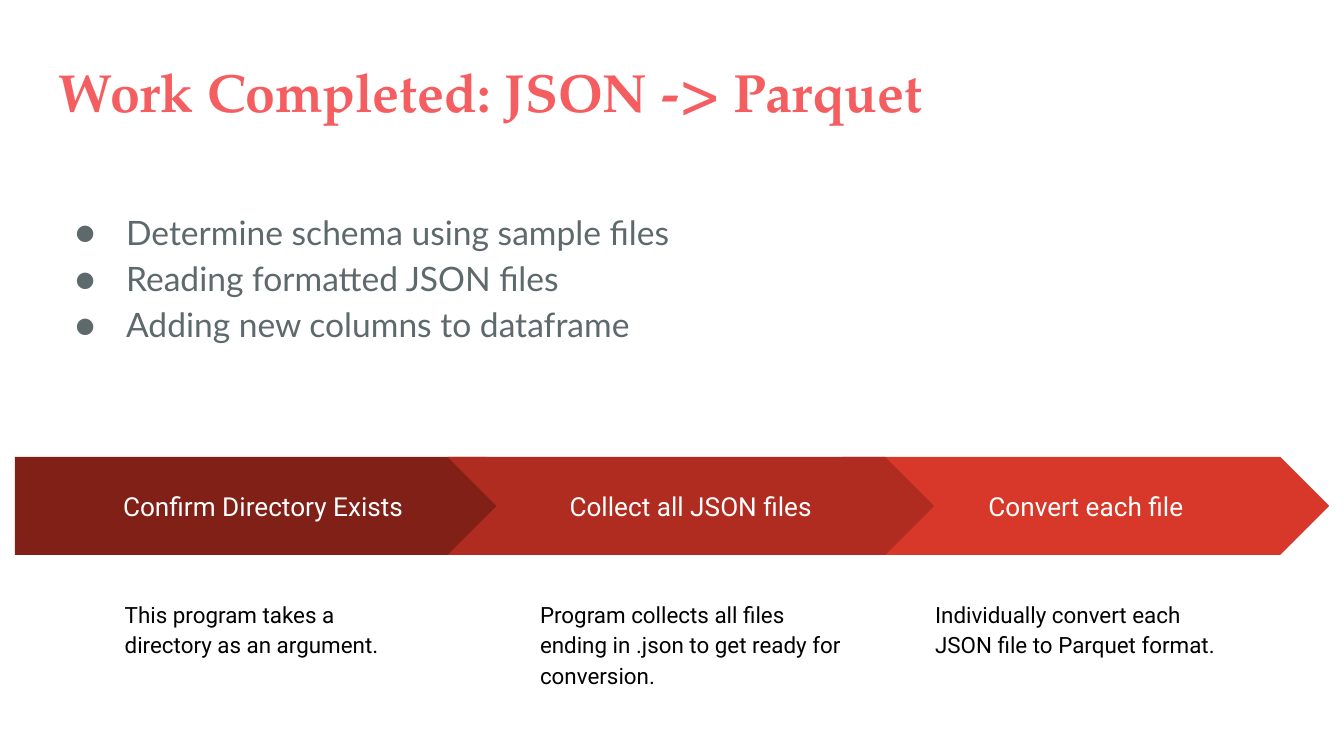
from pptx import Presentation
from pptx.dml.color import RGBColor
from pptx.enum.shapes import MSO_SHAPE as Shape
from pptx.enum.text import MSO_ANCHOR as Anchor, PP_ALIGN as Align
from pptx.oxml.xmlchemy import OxmlElement
from pptx.util import Inches, Pt

# Content
TITLE = "Work Completed: JSON -> Parquet"
BULLETS = [
    "Determine schema using sample files",
    "Reading formatted JSON files",
    "Adding new columns to dataframe",
]
# Steps from back to front: label, detail, preset, fill, arrow left, arrow width, detail left
STEPS = [
    ("Convert each file", "Individually convert each JSON file to Parquet format.",
     Shape.CHEVRON, "D83829", 6.27, 3.62, 6.86),
    ("Confirm Directory Exists", "This program takes a directory as an argument.",
     Shape.PENTAGON, "802017", 0.11, 3.88, 0.83),
    ("Collect all JSON files",
     "Program collects all files ending in .json to get ready for conversion.",
     Shape.CHEVRON, "B02C20", 3.33, 3.62, 3.92),
]

# Formats
SLIDE_WIDTH = 10
SLIDE_HEIGHT = SLIDE_WIDTH * 9 / 16
TITLE_FONT = {"name": "TeX Gyre Pagella", "size": Pt(28.8), "bold": True, "color": "F55E61"}
BULLET_FONT = {"name": "Lato", "size": Pt(18), "color": "5E696C"}
LABEL_FONT = {"name": "Roboto", "size": Pt(14), "color": "FFFFFF"}
DETAIL_FONT = {"name": "Roboto", "size": Pt(12), "color": "000000"}
ARROW_TOP, ARROW_HEIGHT = 3.4, 0.73
DETAIL_TOP, DETAIL_WIDTH, DETAIL_HEIGHT = 4.34, 2.44, 2.86


def rgb(value):
    return RGBColor.from_string(value)


def write(shape, lines, font_format, spacing=None, align=Align.LEFT, anchor=Anchor.TOP):
    frame = shape.text_frame
    frame.word_wrap = True
    frame.vertical_anchor = anchor
    for side in ("left", "top", "right", "bottom"):
        setattr(frame, f"margin_{side}", Inches(0.1))
    frame.text = "\n".join(lines)
    for paragraph in frame.paragraphs:
        paragraph.alignment = align
        paragraph.line_spacing = spacing
        font = paragraph.runs[0].font
        for key, value in font_format.items():
            if key == "color":
                font.color.rgb = rgb(value)
            else:
                setattr(font, key, value)


def add_text(slide, box, lines, font_format, spacing=None):
    shape = slide.shapes.add_textbox(*map(Inches, box))
    write(shape, lines, font_format, spacing)
    return shape


def add_bullet(paragraph, color, typeface):
    properties = paragraph._p.get_or_add_pPr()
    properties.set("marL", str(Inches(0.5)))
    properties.set("indent", str(Inches(-0.38)))
    bullet_color = OxmlElement("a:buClr")
    swatch = OxmlElement("a:srgbClr")
    swatch.set("val", color)
    bullet_color.append(swatch)
    bullet_font = OxmlElement("a:buFont")
    bullet_font.set("typeface", typeface)
    bullet = OxmlElement("a:buChar")
    bullet.set("char", "●")
    properties.extend([bullet_color, bullet_font, bullet])


def add_step(slide, label, detail, preset, fill, left, width, detail_left):
    arrow = slide.shapes.add_shape(
        preset, *map(Inches, (left, ARROW_TOP, width, ARROW_HEIGHT)))
    arrow.shadow.inherit = False
    arrow.adjustments[0] = 0.5
    arrow.fill.solid()
    arrow.fill.fore_color.rgb = rgb(fill)
    arrow.line.fill.background()
    write(arrow, [label], LABEL_FONT, align=Align.CENTER, anchor=Anchor.MIDDLE)
    add_text(slide, (detail_left, DETAIL_TOP, DETAIL_WIDTH, DETAIL_HEIGHT),
             [detail], DETAIL_FONT, 1.15)


def main():
    presentation = Presentation()
    presentation.slide_width = Inches(SLIDE_WIDTH)
    presentation.slide_height = Inches(SLIDE_HEIGHT)
    slide = presentation.slides.add_slide(presentation.slide_layouts[6])

    # Title and bullets
    add_text(slide, (0.34, 0.34, 9.32, 0.68), [TITLE], TITLE_FONT)
    body = add_text(slide, (0.34, 1.43, 5.03, 2.78), BULLETS, BULLET_FONT, 1.15)
    for paragraph in body.text_frame.paragraphs:
        add_bullet(paragraph, BULLET_FONT["color"], BULLET_FONT["name"])

    # Process arrows with their details
    for step in STEPS:
        add_step(slide, *step)

    presentation.save("out.pptx")


if __name__ == "__main__":
    main()
